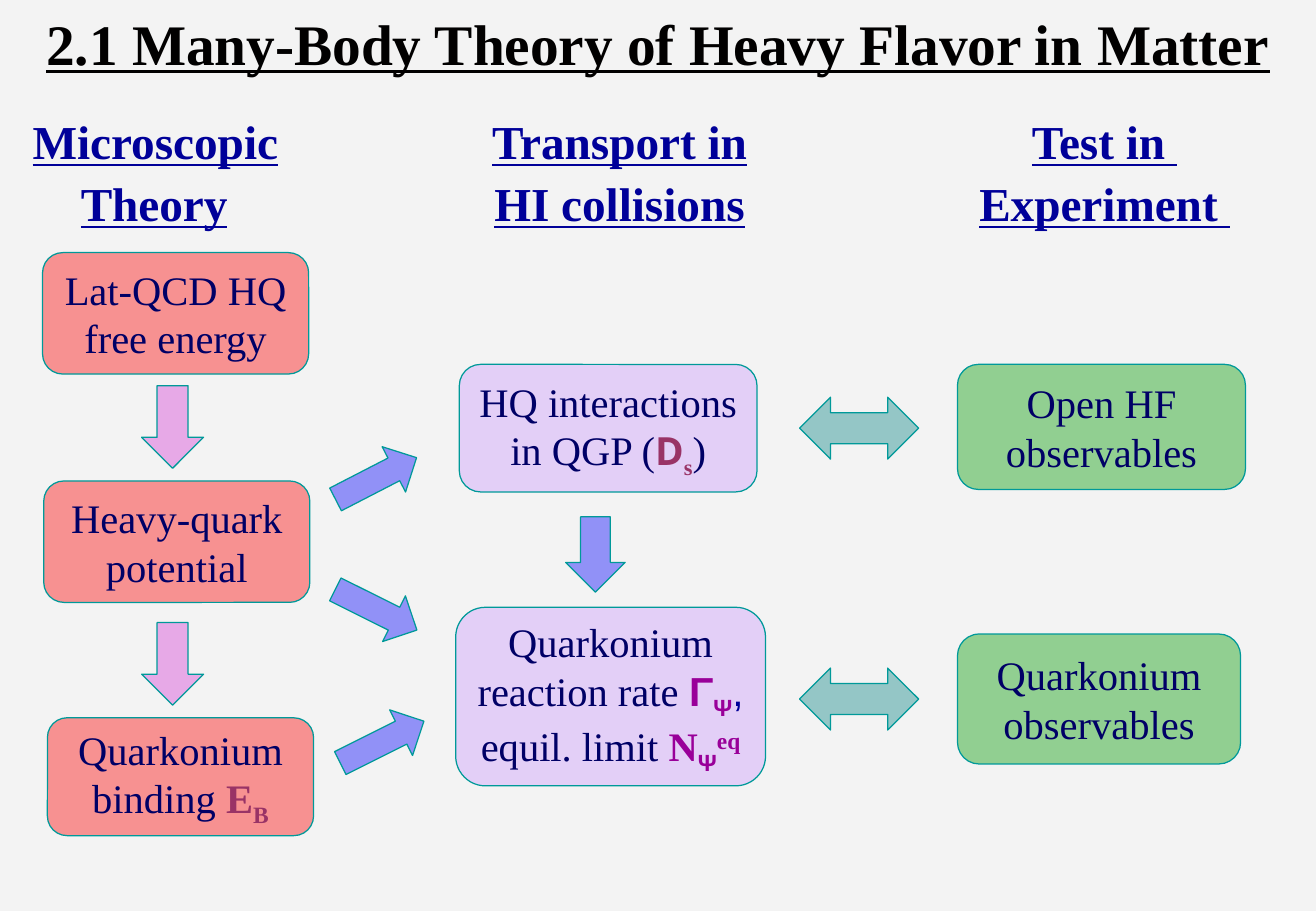
from lxml.etree import SubElement
from pptx import Presentation
from pptx.dml.color import RGBColor
from pptx.enum.shapes import MSO_SHAPE
from pptx.enum.text import MSO_ANCHOR, PP_ALIGN
from pptx.oxml.ns import qn
from pptx.util import Inches, Pt

BLACK = RGBColor(0x01, 0x00, 0x00)
NAVY = RGBColor(0x00, 0x00, 0x66)
BLUE = RGBColor(0x00, 0x00, 0x99)
WINE = RGBColor(0x99, 0x33, 0x66)
PLUM = RGBColor(0x99, 0x00, 0x99)
TEAL = RGBColor(0x00, 0x99, 0x99)
PAPER = RGBColor(0xF3, 0xF3, 0xF3)

# Fill colour and opacity in percent
RED = RGBColor(0xFF, 0x00, 0x00), 40
LILAC = RGBColor(0xCC, 0x99, 0xFF), 40
GREEN = RGBColor(0x00, 0x99, 0x00), 40
PINK = RGBColor(0xCC, 0x00, 0xCC), 30
INDIGO = RGBColor(0x00, 0x00, 0xFF), 40
CYAN = RGBColor(0x00, 0x80, 0x80), 39

SERIF = "Times New Roman"
CELL = Inches(0.01)  # the slide is a grid of 1083 columns by 750 rows
WIDE, HIGH = 1083, 750

TITLE = "2.1 Many-Body Theory of Heavy Flavor in Matter"
HEADS = [("Microscopic", "Transport in", "Test in "),
         ("Theory", "HI collisions", "Experiment ")]
TABS = 100, 483, 882  # column centres inside the heading box

wine = dict(color=WINE, bold=True)
plum = dict(color=PLUM, bold=True)
RATE = ["reaction rate ", ("Γ", dict(plum, name="Arial")),
        ("Ψ", dict(plum, name="Arial", base=-25)),
        (",", dict(color=BLUE, name="Arial"))]
LIMIT = ["equil. limit ", ("N", plum),
         ("Ψ", dict(plum, name="Arial", base=-25)),
         ("eq", dict(plum, base=30))]
QGP = ["in QGP (", ("D", dict(wine, name="Noto Sans", size=23)),
       ("s", dict(wine, size=23, base=-25)), ")"]
BIND = ["binding ", ("E", wine), ("B", dict(wine, base=-25))]

# Left, top, width, height, fill, lines of text
BOXES = [
    (35, 208, 219, 100, RED, [["Lat-QCD HQ"], ["free energy"]]),
    (36, 396, 219, 100, RED, [["Heavy-quark"], ["potential"]]),
    (39, 591, 219, 97, RED, [["Quarkonium"], BIND]),
    (378, 300, 245, 105, LILAC, [["HQ interactions"], QGP]),
    (375, 500, 255, 147, LILAC, [["Quarkonium"], RATE, LIMIT]),
    (788, 300, 237, 103, GREEN, [["Open HF"], ["observables"]]),
    (788, 522, 233, 107, GREEN, [["Quarkonium"], ["observables"]]),
]

# Kind, fill, width, height, then left, top and turn of each arrow
ARROWS = [
    (MSO_SHAPE.RIGHT_ARROW, PINK, 68, 51, [(108, 326, 90), (108, 521, 90)]),
    (MSO_SHAPE.RIGHT_ARROW, INDIGO, 75, 42,
     [(272, 373, -27.3), (272, 481, 26.5)]),
    (MSO_SHAPE.RIGHT_ARROW, INDIGO, 77, 42, [(276, 590, -26.6)]),
    (MSO_SHAPE.RIGHT_ARROW, INDIGO, 62, 49, [(459, 432, 90)]),
    (MSO_SHAPE.LEFT_RIGHT_ARROW, CYAN, 98, 51,
     [(658, 327, 0), (658, 550, 0)]),
]


def cells(*counts):
    return [count * CELL for count in counts]


def put(para, text, size=24, name=SERIF, color=NAVY, bold=False,
        line=False, base=0):
    """Add one run of text with its format; base shifts it off the baseline."""
    run = para.add_run()
    run.text = text
    font = run.font
    font.size, font.name, font.bold, font.underline = Pt(size), name, bold, line
    font.color.rgb = color
    if base:
        run._r.get_or_add_rPr().set("baseline", str(base * 1000))


def lines(frame, count):
    """Return count paragraphs of the frame, the first one included."""
    return [frame.paragraphs[0]] + [frame.add_paragraph()
                                    for _ in range(count - 1)]


def draw(slide, kind, rect, paint):
    shape = slide.shapes.add_shape(kind, *cells(*rect))
    shape.shadow.inherit = False
    color, share = paint
    shape.fill.solid()
    shape.fill.fore_color.rgb = color
    tint = shape.fill._xPr.find(qn("a:solidFill"))[0]
    SubElement(tint, qn("a:alpha")).set("val", str(share * 1000))
    shape.line.color.rgb = TEAL
    shape.line.width = Pt(0.75)
    return shape


def add_title(slide):
    title = slide.shapes.title
    title.left, title.top, title.width, title.height = cells(0, 8, WIDE, 68)
    frame = title.text_frame
    frame.vertical_anchor = MSO_ANCHOR.MIDDLE
    para = frame.paragraphs[0]
    para.alignment = PP_ALIGN.CENTER
    para.line_spacing = 0.7
    put(para, TITLE, size=34, color=BLACK, bold=True, line=True)


def add_heads(slide):
    frame = slide.shapes.add_textbox(*cells(17, 83, 1058, 110)).text_frame
    frame.word_wrap = True
    style = dict(size=28, color=BLUE, bold=True)
    for para, row in zip(lines(frame, len(HEADS)), HEADS):
        para.line_spacing = 1.1
        stops = SubElement(para._p.get_or_add_pPr(), qn("a:tabLst"))
        for stop, head in zip(TABS, row):
            tab = SubElement(stops, qn("a:tab"))
            tab.set("pos", str(stop * CELL))
            tab.set("algn", "ctr")
            put(para, "\t", **style)
            put(para, head, line=True, **style)


def add_box(slide, rect, paint, text):
    frame = draw(slide, MSO_SHAPE.ROUNDED_RECTANGLE, rect, paint).text_frame
    frame.word_wrap = False
    frame.vertical_anchor = MSO_ANCHOR.MIDDLE
    for para, parts in zip(lines(frame, len(text)), text):
        para.alignment = PP_ALIGN.CENTER
        for part in parts:
            word, style = (part, {}) if isinstance(part, str) else part
            put(para, word, **style)


def main():
    deck = Presentation()
    deck.slide_width, deck.slide_height = cells(WIDE, HIGH)
    slide = deck.slides.add_slide(deck.slide_layouts[5])
    slide.background.fill.solid()
    slide.background.fill.fore_color.rgb = PAPER
    add_title(slide)
    add_heads(slide)
    for *rect, paint, text in BOXES:
        add_box(slide, rect, paint, text)
    for kind, paint, wide, high, spots in ARROWS:
        for left, top, turn in spots:
            draw(slide, kind, (left, top, wide, high), paint).rotation = turn
    deck.save("out.pptx")


if __name__ == "__main__":
    main()
